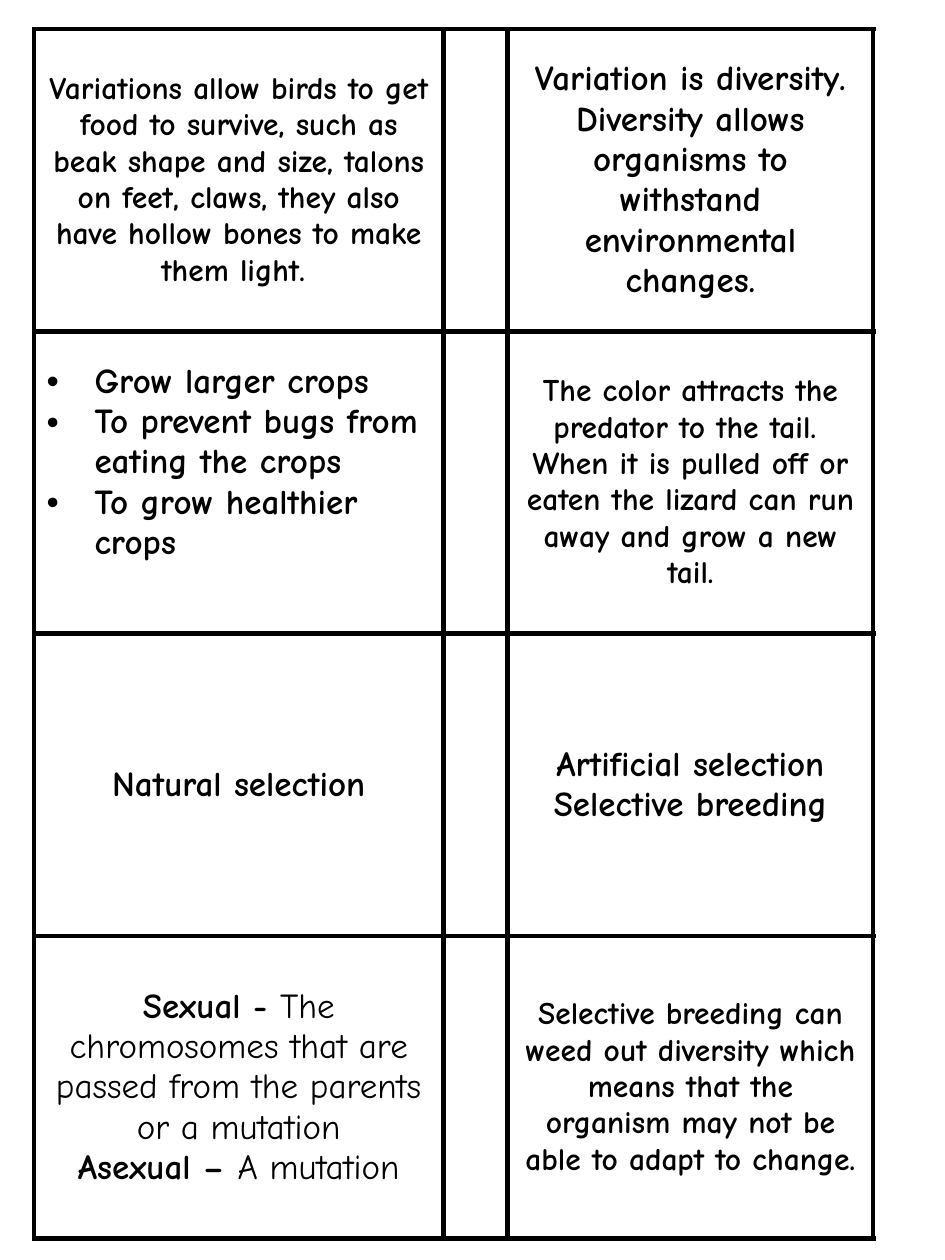
from lxml import etree
from pptx import Presentation
from pptx import util as u
from pptx.dml.color import RGBColor
from pptx.enum import text
from pptx.oxml.ns import qn

BLACK = RGBColor(0x00, 0x00, 0x00)
WHITE = RGBColor(0xFF, 0xFF, 0xFF)
FONT = "Comic Neue"
COLUMNS = [3.25, 0.51, 2.9]
ROW_HEIGHT, ROW_COUNT = 2.4, 4
BULLET_INDENT = u.Inches(0.38)

# (row, column): (size, bulleted, paragraphs as lists of (words, bold))
ANSWERS = {
    (0, 0): (18, False, [[("Variations allow birds to get food to survive, such as beak shape and size, "
                           "talons on feet, claws, they also have hollow bones to make them light. ", True)]]),
    (0, 2): (20, False, [[("Variation is diversity. Diversity allows organisms to withstand "
                           "environmental changes.", True)]]),
    (1, 0): (20, True, [[("Grow larger crops", True)],
                        [("To prevent bugs from eating the crops", True)],
                        [("To grow healthier crops", True)]]),
    (1, 2): (18, False, [[("The color attracts the predator to the tail.  When it is pulled off or eaten "
                           "the lizard can run away and grow a new tail.", True)]]),
    (2, 0): (20, False, [[("Natural selection", True)]]),
    (2, 2): (20, False, [[("Artificial selection", True)], [("Selective breeding", True)]]),
    (3, 0): (20, False, [[("Sexual - ", True),
                          ("The chromosomes that are passed from the parents or a mutation", False)],
                         [("Asexual – ", True), ("A mutation", False)]]),
    (3, 2): (18, False, [[("Selective breeding can weed out diversity which means that the organism "
                           "may not be able to adapt to change.", True)]]),
}


def add_borders(cell, points):
    properties = cell._tc.get_or_add_tcPr()
    for position, side in enumerate(("a:lnL", "a:lnR", "a:lnT", "a:lnB")):
        line = etree.Element(qn(side), w=str(u.Pt(points)))
        fill = etree.SubElement(line, qn("a:solidFill"))
        etree.SubElement(fill, qn("a:srgbClr"), val=str(BLACK))
        properties.insert(position, line)


def add_bullet(para):
    properties = para._p.get_or_add_pPr()
    properties.set("marL", str(BULLET_INDENT))
    properties.set("indent", str(-BULLET_INDENT))
    etree.SubElement(properties, qn("a:buFont"), typeface="Arial")
    etree.SubElement(properties, qn("a:buChar"), char="•")


deck = Presentation()
deck.slide_width, deck.slide_height = u.Inches(7.5), u.Inches(10)
page = deck.slides.add_slide(deck.slide_layouts[6])
page.background.fill.solid()
page.background.fill.fore_color.rgb = WHITE

answer_table = page.shapes.add_table(
    ROW_COUNT, len(COLUMNS), u.Inches(0.27), u.Inches(0.23),
    u.Inches(sum(COLUMNS)), u.Inches(ROW_HEIGHT * ROW_COUNT)).table
answer_table.first_row = answer_table.horz_banding = False
for column, width in zip(answer_table.columns, COLUMNS):
    column.width = u.Inches(width)
for row in answer_table.rows:
    row.height = u.Inches(ROW_HEIGHT)
for cell in answer_table.iter_cells():
    cell.fill.background()
    add_borders(cell, 3)

for (row, column), (size, bulleted, paragraphs) in ANSWERS.items():
    cell = answer_table.cell(row, column)
    cell.vertical_anchor = text.MSO_ANCHOR.MIDDLE
    if bulleted:
        cell.margin_bottom = u.Inches(0.37)  # the list sits above the middle
    for index, runs in enumerate(paragraphs):
        frame = cell.text_frame
        para = frame.add_paragraph() if index else frame.paragraphs[0]
        if bulleted:
            add_bullet(para)
        else:
            para.alignment = text.PP_ALIGN.CENTER
        for words, bold in runs:
            span = para.add_run()
            span.text = words
            span.font.name, span.font.size, span.font.bold = FONT, u.Pt(size), bold
            span.font.color.rgb = BLACK

deck.save("out.pptx")
